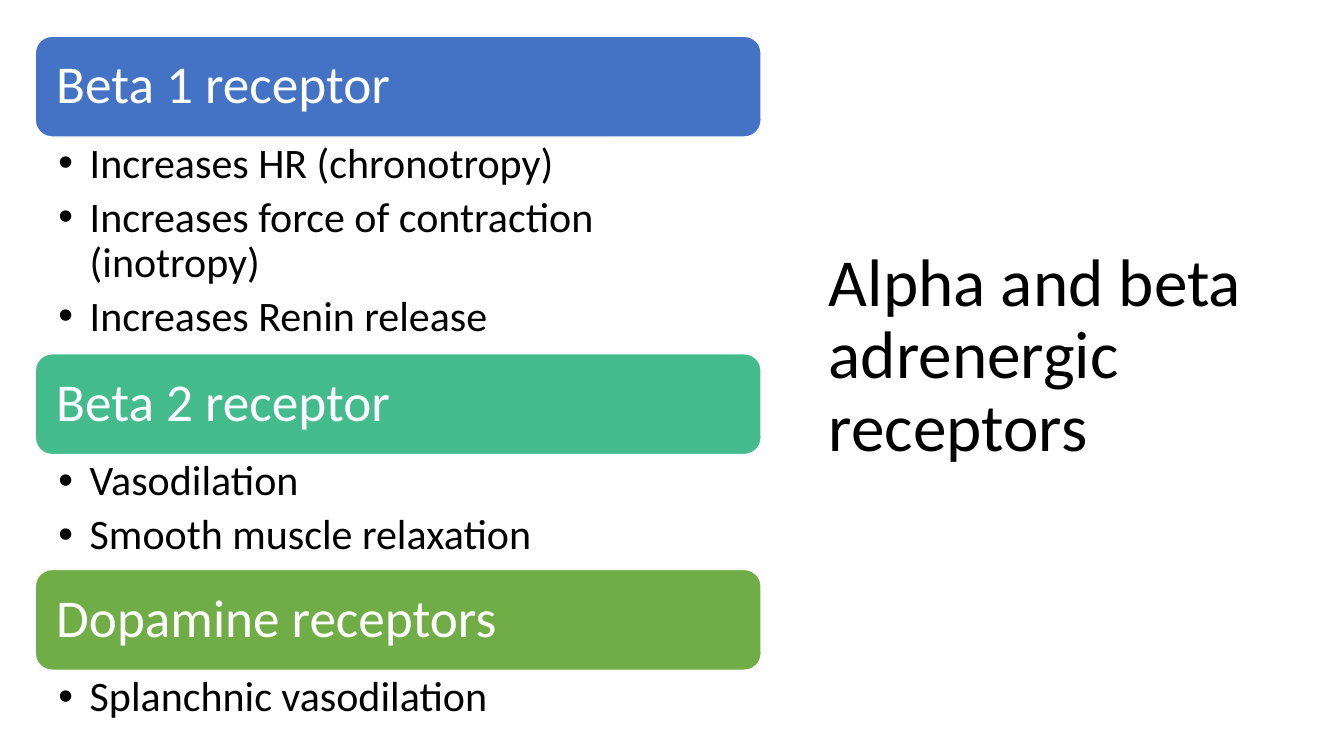
from dataclasses import dataclass
from lxml.etree import SubElement
from pptx import Presentation
from pptx.dml.color import RGBColor
from pptx.enum.shapes import MSO_SHAPE
from pptx.enum.text import MSO_ANCHOR, MSO_AUTO_SIZE, PP_ALIGN
from pptx.oxml.ns import qn
from pptx.slide import Slide
from pptx.text.text import TextFrame, _Paragraph
from pptx.util import Inches, Pt

WIDE, HIGH = 13.33, 7.5
LEFT, SPAN, TOP, BAR = 0.35, 7.2, 0.36, 1.0
INDENT = 0.31


@dataclass
class Group:
    name: str
    fill: str
    slot: int
    depth: float
    items: list[str]


GROUPS = [
    Group("Beta 1 receptor", "4472C4", 1, 2.15, [
        "Increases HR (chronotropy)",
        "Increases force of contraction (inotropy)",
        "Increases Renin release",
    ]),
    Group("Beta 2 receptor", "43BB8D", 2, 1.14, ["Vasodilation", "Smooth muscle relaxation"]),
    Group("Dopamine receptors", "70AD47", 4, 0.69, ["Splanchnic vasodilation"]),
]


def color(code: str) -> RGBColor:
    return RGBColor.from_string(code)


def place(shape, left: float, top: float, width: float, height: float) -> None:
    shape.left, shape.top = Inches(left), Inches(top)
    shape.width, shape.height = Inches(width), Inches(height)


def setup(frame: TextFrame, anchor: MSO_ANCHOR, left: float, right: float) -> None:
    frame.word_wrap = True
    frame.auto_size = MSO_AUTO_SIZE.NONE
    frame.vertical_anchor = anchor
    frame.margin_left, frame.margin_right = Inches(left), Inches(right)
    frame.margin_top = frame.margin_bottom = Inches(0.05)


def style(para: _Paragraph, size: int, code: str, after: float = 0) -> None:
    para.alignment = PP_ALIGN.LEFT
    para.line_spacing = 0.9
    para.space_before, para.space_after = Pt(0), Pt(after)
    for run in para.runs:
        font = run.font
        font.name, font.size, font.bold = "Calibri", Pt(size), False
        font.color.rgb = color(code)


def bullet(para: _Paragraph) -> None:
    para.level = 1
    props = para._p.get_or_add_pPr()
    props.set("marL", str(Inches(INDENT)))
    props.set("indent", str(-Inches(INDENT)))
    SubElement(props, qn("a:buFont")).set("typeface", "Arial")
    SubElement(props, qn("a:buChar")).set("char", "•")


def draw_head(slide: Slide, group: Group, top: float) -> None:
    bar = slide.shapes.add_shape(
        MSO_SHAPE.ROUNDED_RECTANGLE, Inches(LEFT), Inches(top), Inches(SPAN), Inches(BAR))
    bar.shadow.inherit = False
    bar.fill.solid()
    bar.fill.fore_color.rgb = color(group.fill)
    bar.line.color.rgb = color("FFFFFF")
    bar.line.width = Pt(1)
    frame = bar.text_frame
    setup(frame, MSO_ANCHOR.MIDDLE, 0.16, 0.16)
    frame.text = group.name
    style(frame.paragraphs[0], 38, "FFFFFF")


def draw_list(slide: Slide, group: Group, top: float) -> None:
    body = next(p for p in slide.placeholders if p.placeholder_format.idx == group.slot)
    place(body, LEFT, top, SPAN, group.depth)
    frame = body.text_frame
    setup(frame, MSO_ANCHOR.TOP, 0.23, 0.3)
    frame.text = "\n".join(group.items)
    for para in frame.paragraphs:
        bullet(para)
        style(para, 30, "000000", 6)


def draw_title(slide: Slide) -> None:
    title = slide.shapes.title
    place(title, 8.12, 0.53, 5.67, 6.02)
    frame = title.text_frame
    setup(frame, MSO_ANCHOR.MIDDLE, 0.1, 0.1)
    frame.text = "Alpha and beta adrenergic receptors"
    style(frame.paragraphs[0], 48, "000000")


def main() -> None:
    deck = Presentation()
    deck.slide_width, deck.slide_height = Inches(WIDE), Inches(HIGH)
    slide = deck.slides.add_slide(deck.slide_layouts.get_by_name("Comparison"))
    draw_title(slide)
    top = TOP
    for group in GROUPS:
        draw_head(slide, group, top)
        draw_list(slide, group, top + BAR)
        top += BAR + group.depth
    for spare in list(slide.placeholders):
        if not spare.text_frame.text:
            spare.element.getparent().remove(spare.element)
    deck.save("out.pptx")


if __name__ == "__main__":
    main()
